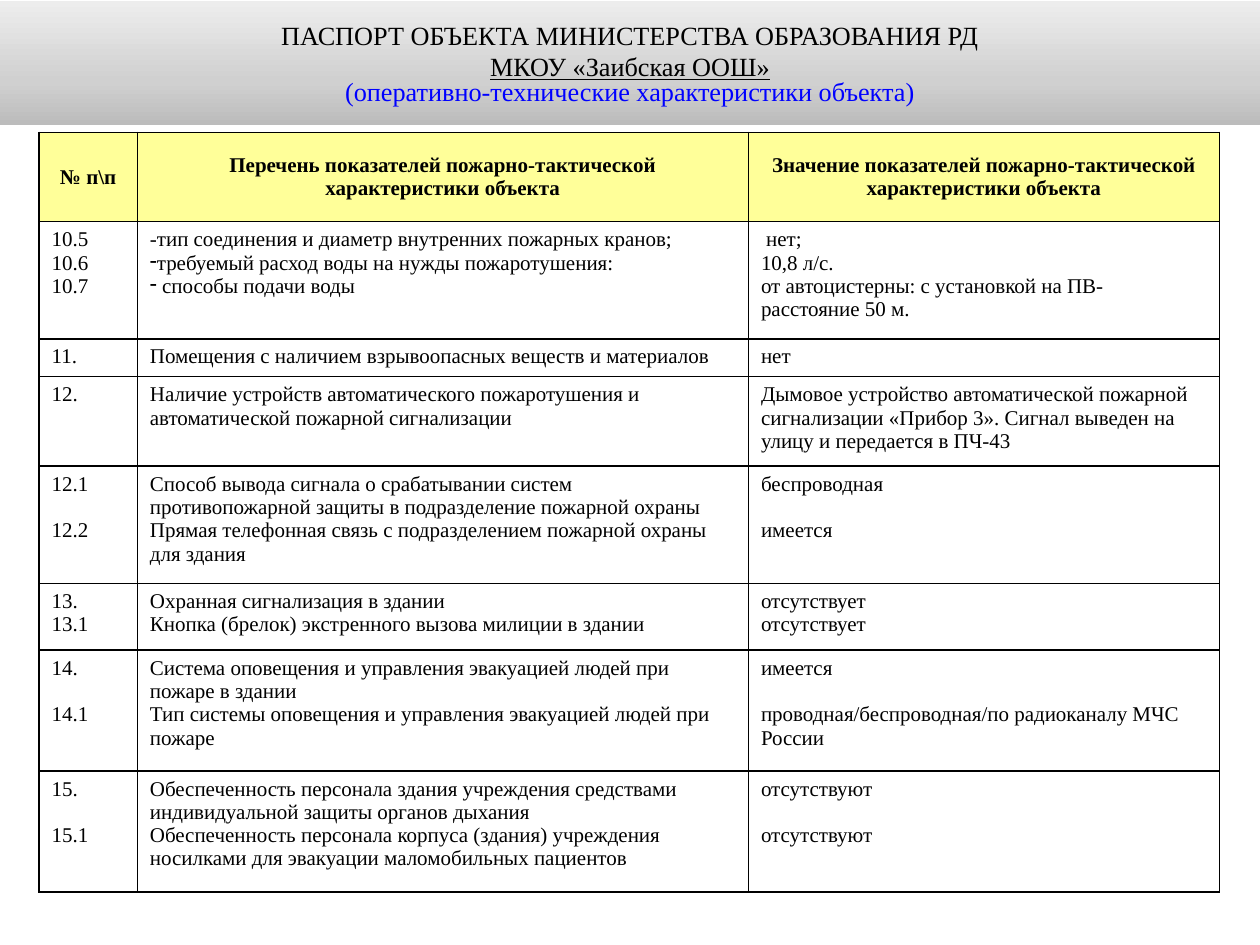
import copy
from dataclasses import dataclass
from typing import NamedTuple

import pptx
import pptx.dml.color
import pptx.enum.text
import pptx.oxml
import pptx.oxml.ns
import pptx.util
from pptx.util import Inches

RGB = pptx.dml.color.RGBColor.from_string
ALIGN = pptx.enum.text.PP_ALIGN
ANCHOR = pptx.enum.text.MSO_ANCHOR
qn = pptx.oxml.ns.qn
NS = pptx.oxml.ns.nsdecls("a")


@dataclass(frozen=True)
class Theme:
    font: str = "Times New Roman"
    title_size: float = 15
    table_size: float = 12
    line_gap: float = 13.4  # height of one table line
    border: float = 1
    text: str = "000000"
    accent: str = "0000FF"
    header_fill: str = "FFFF99"
    cell_fill: str = "FFFFFF"
    banner: tuple = ((0, "BCBCBC"), (0.35, "D0D0D0"), (1, "EDEDED"))


class Item(NamedTuple):
    text: str
    bullet: bool = False
    gap: bool = False  # leave one line free above


class Row(NamedTuple):
    height: float
    cells: tuple  # one list of items per column


class TitleLine(NamedTuple):
    text: str
    color: str
    underline: bool = False
    spacing: float = 1.0


def items(*texts: str, gap: bool = False) -> list:
    return [Item(t, gap=gap and i > 0) for i, t in enumerate(texts)]


THEME = Theme()
COLUMNS = (0.78, 4.85, 3.74)

TITLE = (
    TitleLine("ПАСПОРТ ОБЪЕКТА МИНИСТЕРСТВА ОБРАЗОВАНИЯ РД", THEME.text),
    TitleLine("МКОУ «Заибская ООШ»", THEME.text, underline=True),
    TitleLine("(оперативно-технические характеристики объекта)", THEME.accent, spacing=0.8),
)

ROWS = (
    Row(0.71, (
        items("№ п\\п"),
        items("Перечень показателей пожарно-тактической характеристики объекта"),
        items("Значение показателей пожарно-тактической характеристики объекта"))),
    Row(0.93, (
        items("10.5", "10.6", "10.7"),
        [Item("-тип соединения и диаметр внутренних пожарных кранов;"),
         Item("требуемый расход воды на нужды пожаротушения:", bullet=True),
         Item(" способы подачи воды", bullet=True)],
        items(" нет;", "10,8 л/с.",
              "от автоцистерны: с установкой на ПВ- расстояние 50 м."))),
    Row(0.3, (
        items("11."),
        items("Помещения с наличием взрывоопасных веществ и материалов"),
        items("нет"))),
    Row(0.71, (
        items("12."),
        items("Наличие устройств автоматического пожаротушения и "
              "автоматической пожарной сигнализации"),
        items("Дымовое устройство автоматической пожарной сигнализации "
              "«Прибор 3». Сигнал выведен на улицу и передается в ПЧ-43"))),
    Row(0.93, (
        items("12.1", "12.2", gap=True),
        items("Способ вывода сигнала о срабатывании систем противопожарной "
              "защиты в подразделение пожарной охраны",
              "Прямая телефонная связь с подразделением пожарной охраны для здания"),
        items("беспроводная", "имеется", gap=True))),
    Row(0.53, (
        items("13.", "13.1"),
        items("Охранная сигнализация в здании",
              "Кнопка (брелок) экстренного вызова милиции в здании"),
        items("отсутствует", "отсутствует"))),
    Row(0.96, (
        items("14.", "14.1", gap=True),
        items("Система оповещения и управления эвакуацией людей при пожаре в здании",
              "Тип системы оповещения и управления эвакуацией людей при пожаре"),
        items("имеется", "проводная/беспроводная/по радиоканалу МЧС России", gap=True))),
    Row(0.96, (
        items("15.", "15.1", gap=True),
        items("Обеспеченность персонала здания учреждения средствами "
              "индивидуальной защиты органов дыхания",
              "Обеспеченность персонала корпуса (здания) учреждения "
              "носилками для эвакуации маломобильных пациентов"),
        items("отсутствуют", "отсутствуют", gap=True))),
)


def set_font(p, size: float, color: str, bold: bool = False) -> None:
    p.font.name = THEME.font
    p.font.size = pptx.util.Pt(size)
    p.font.bold = bold
    p.font.color.rgb = RGB(color)


def fill_banner(sp) -> None:
    sp.fill.gradient()
    sp.fill.gradient_angle = 90
    gs_list = sp._element.spPr.find(".//" + qn("a:gsLst"))
    gs_list.insert(1, copy.deepcopy(gs_list[0]))
    for stop, (position, color) in zip(sp.fill.gradient_stops, THEME.banner):
        stop.position = position
        stop.color.rgb = RGB(color)


def add_banner(s) -> None:
    sp = s.shapes.title
    sp.left, sp.top, sp.width, sp.height = map(Inches, (0, 0.01, 10, 0.98))
    fill_banner(sp)
    tf = sp.text_frame
    tf.auto_size = pptx.enum.text.MSO_AUTO_SIZE.NONE
    tf.word_wrap = True
    tf.vertical_anchor = ANCHOR.MIDDLE
    tf.margin_left = tf.margin_right = Inches(0.09)
    tf.margin_top = tf.margin_bottom = Inches(0.05)
    tf.text = "\n".join(line.text for line in TITLE)
    for p, line in zip(tf.paragraphs, TITLE):
        p.alignment = ALIGN.CENTER
        p.line_spacing = line.spacing
        set_font(p, THEME.title_size, line.color)
        p.font.underline = line.underline


def add_borders(cell) -> None:
    tc_pr = cell._tc.get_or_add_tcPr()
    width = pptx.util.Pt(THEME.border)
    for i, side in enumerate(("lnL", "lnR", "lnT", "lnB")):
        tc_pr.insert(i, pptx.oxml.parse_xml(
            f'<a:{side} {NS} w="{width}"><a:solidFill>'
            f'<a:srgbClr val="{THEME.text}"/></a:solidFill></a:{side}>'))


def add_bullet(p) -> None:
    p_pr = p._p.get_or_add_pPr()
    p_pr.set("marL", "0")
    p_pr.set("indent", "0")
    bullet = pptx.oxml.parse_xml(f'<a:buChar {NS} char="-"/>')
    p_pr.insert_element_before(bullet, "a:tabLst", "a:defRPr", "a:extLst")


def fill_cell(cell, lines: list, header: bool) -> None:
    cell.fill.solid()
    cell.fill.fore_color.rgb = RGB(THEME.header_fill if header else THEME.cell_fill)
    add_borders(cell)
    cell.vertical_anchor = ANCHOR.MIDDLE if header else ANCHOR.TOP
    cell.margin_left = cell.margin_right = Inches(0.1)
    cell.margin_top = cell.margin_bottom = Inches(0.05)
    cell.text = "\n".join(item.text for item in lines)
    for p, item in zip(cell.text_frame.paragraphs, lines):
        p.alignment = ALIGN.CENTER if header else ALIGN.LEFT
        set_font(p, THEME.table_size, THEME.text, header)
        if item.gap:
            p.space_before = pptx.util.Pt(THEME.line_gap)
        if item.bullet:
            add_bullet(p)


def add_passport_table(s) -> None:
    height = sum(row.height for row in ROWS)
    table = s.shapes.add_table(
        len(ROWS), len(COLUMNS), Inches(0.31), Inches(1.05),
        Inches(sum(COLUMNS)), Inches(height)).table
    for column, width in zip(table.columns, COLUMNS):
        column.width = Inches(width)
    for r, row in enumerate(ROWS):
        table.rows[r].height = Inches(row.height)
        for c, lines in enumerate(row.cells):
            fill_cell(table.cell(r, c), lines, header=r == 0)


def main() -> None:
    prs = pptx.Presentation()
    prs.slide_width, prs.slide_height = Inches(10), Inches(7.5)
    s = prs.slides.add_slide(prs.slide_layouts[5])  # title only
    add_banner(s)
    add_passport_table(s)
    prs.save("out.pptx")


if __name__ == "__main__":
    main()
